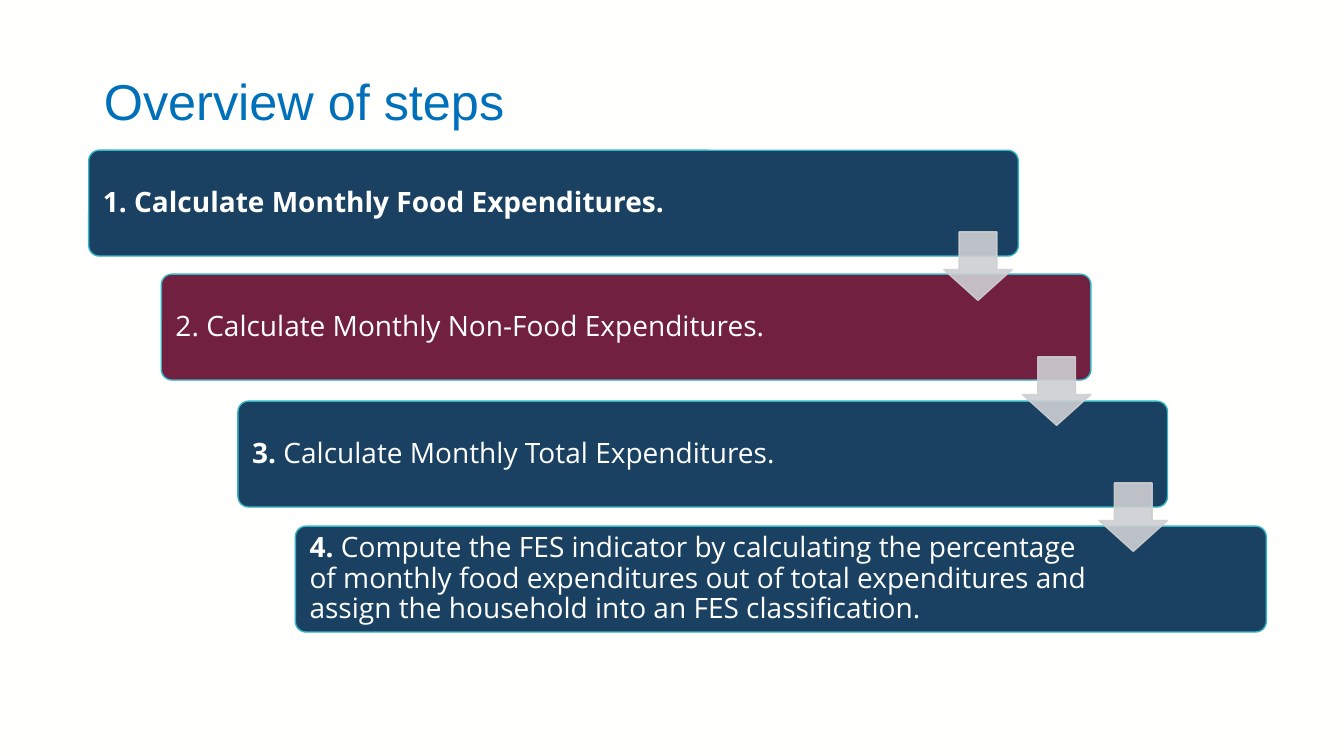
from lxml import etree
from pptx import Presentation
from pptx.dml.color import RGBColor
from pptx.enum.shapes import MSO_SHAPE
from pptx.enum.text import MSO_ANCHOR, PP_ALIGN
from pptx.oxml.ns import qn
from pptx.util import Inches, Pt

BAR, ARROW = MSO_SHAPE.ROUNDED_RECTANGLE, MSO_SHAPE.DOWN_ARROW
MIDDLE, LEFT = MSO_ANCHOR.MIDDLE, PP_ALIGN.LEFT
WHITE, NAVY, WINE = "FFFFFE", "1A4161", "722040"
TEAL, GREY, BLUE = "36B5C5", "CDCFD2", "0070BA"
BAR_HEIGHT, ARROW_SIZE = 1.05, 0.68

STEPS = [
    (0.88, 1.49, 9.22, NAVY, [("1. Calculate Monthly Food Expenditures.", True)]),
    (1.6, 2.72, 9.22, WINE, [("2. Calculate Monthly Non-Food Expenditures.", False)]),
    (2.36, 3.98, 9.22, NAVY, [("3. ", True), ("Calculate Monthly Total Expenditures.", False)]),
    (2.93, 5.22, 9.63, NAVY, [
        ("4. ", True),
        ("Compute the FES indicator by calculating the percentage of monthly food "
         "expenditures out of total expenditures and assign the household into an "
         "FES classification.", False)]),
]
ARROWS = [(9.36, 2.3), (10.14, 3.54), (10.9, 4.79)]


def rgb(color):
    """Turn a hex string into a colour."""
    return RGBColor.from_string(color)


def add_runs(tf, runs, font, size, color):
    """Write one left-aligned paragraph of (text, bold) runs."""
    tf.word_wrap = True
    tf.vertical_anchor = MIDDLE
    p = tf.paragraphs[0]
    p.alignment = LEFT
    p.line_spacing = 0.9
    for text, bold in runs:
        r = p.add_run()
        r.text = text
        r.font.name, r.font.size, r.font.bold = font, Pt(size), bold
        r.font.color.rgb = rgb(color)


def add_box(s, kind, box, fill, line, adjustments):
    """Add a flat preset shape with a one-point outline."""
    sp = s.shapes.add_shape(kind, *[Inches(v) for v in box])
    sp.shadow.inherit = False
    sp.fill.solid()
    sp.fill.fore_color.rgb = rgb(fill)
    sp.line.color.rgb = rgb(line)
    sp.line.width = Pt(1)
    for i, value in enumerate(adjustments):
        sp.adjustments[i] = value
    return sp


def add_title(s, text):
    """Place and format the slide title."""
    sp = s.shapes.title
    sp.left, sp.top = Inches(0.93), Inches(0.4)
    sp.width, sp.height = Inches(11.53), Inches(1.26)
    add_runs(sp.text_frame, [(text, False)], "Arial", 36, BLUE)


def add_step(s, left, top, width, fill, runs):
    """Add one step bar, its text kept clear of the arrows."""
    sp = add_box(s, BAR, (left, top, width, BAR_HEIGHT), fill, TEAL, [0.1])
    tf = sp.text_frame
    tf.margin_left, tf.margin_right = Inches(0.11), Inches(1.6)
    tf.margin_top = tf.margin_bottom = Inches(0.08)
    add_runs(tf, runs, "Open Sans", 20, WHITE)


def add_arrow(s, left, top):
    """Add a slightly transparent arrow between two steps."""
    sp = add_box(s, ARROW, (left, top, ARROW_SIZE, ARROW_SIZE), GREY, GREY, [0.55, 0.45])
    for color in sp._element.spPr.iter(qn("a:srgbClr")):
        etree.SubElement(color, qn("a:alpha")).set("val", "90000")


def main():
    """Build the slide and save it."""
    prs = Presentation()
    prs.slide_width, prs.slide_height = Inches(13.33), Inches(7.5)
    s = prs.slides.add_slide(prs.slide_layouts[5])
    s.background.fill.solid()
    s.background.fill.fore_color.rgb = rgb(WHITE)
    add_title(s, "Overview of steps")
    for step in STEPS:
        add_step(s, *step)
    for arrow in ARROWS:
        add_arrow(s, *arrow)
    prs.save("out.pptx")


if __name__ == "__main__":
    main()
